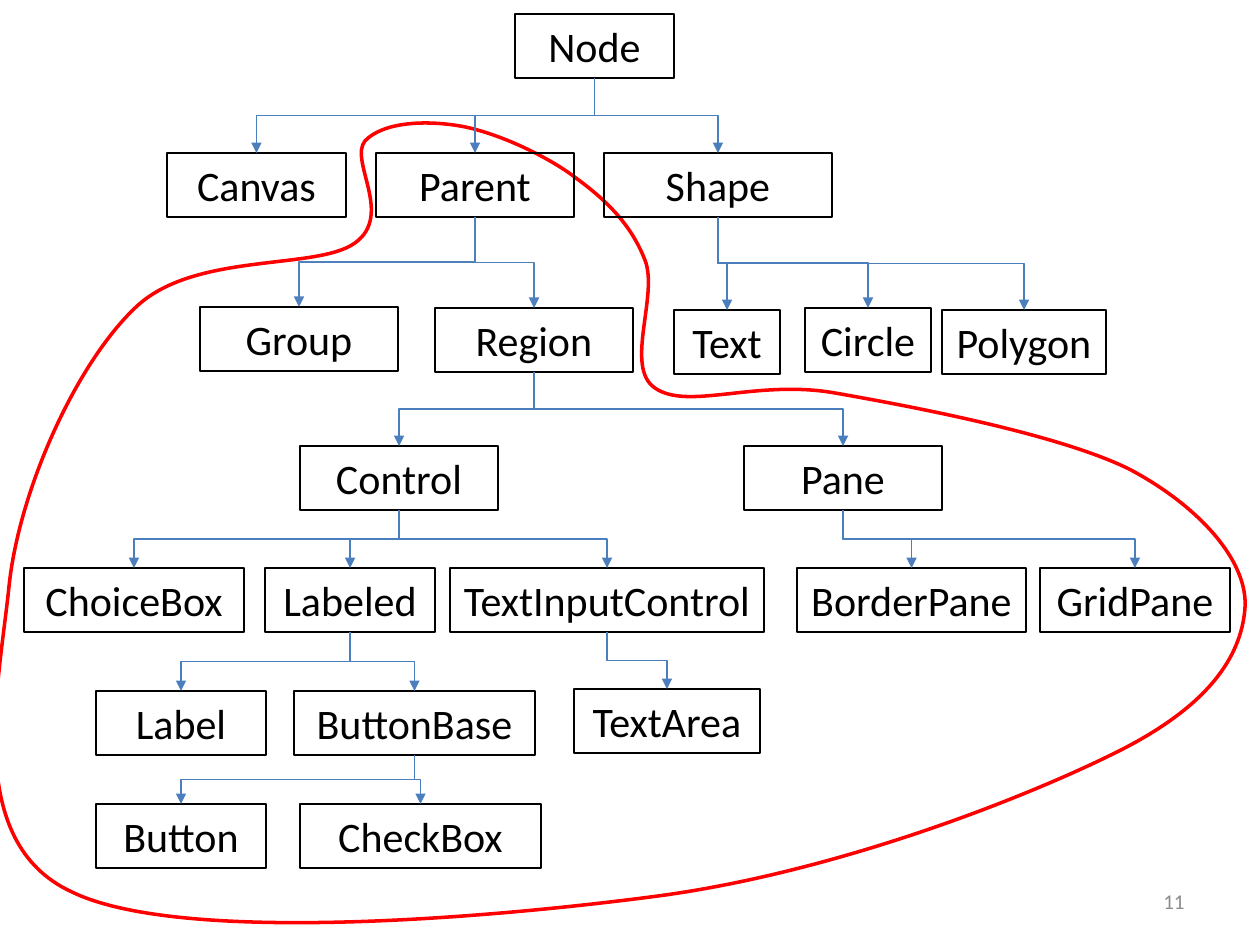
"""Draw the scene graph class hierarchy with its parent branch outlined."""
from lxml import etree
from pptx import Presentation
from pptx import util as u
from pptx.dml.color import RGBColor
from pptx.enum import shapes, text
from pptx.oxml.ns import qn

PX = u.Inches(1) / 126
THEME = {
    "font": "Calibri", "label": 24, "number": 12, "thin": 0.75, "thick": 2,
    "ink": RGBColor(0, 0, 0), "paper": RGBColor(255, 255, 255),
    "outline": RGBColor(255, 0, 0), "grey": RGBColor(0x8C, 0x8C, 0x8C),
    "link": RGBColor(0x4B, 0x7E, 0xBC), "parent": RGBColor(0x4F, 0x81, 0xBD),
}
BOX_H = 64


def px(*values):
    return [u.Emu(round(v * PX)) for v in values]


def write(sp, words, size, color, align):
    tf = sp.text_frame
    tf.word_wrap = True
    p = tf.paragraphs[0]
    p.alignment = align
    r = p.add_run()
    r.text = words
    r.font.name = THEME["font"]
    r.font.size = u.Pt(size)
    r.font.color.rgb = color
    return tf


prs = Presentation()
prs.slide_width, prs.slide_height = px(1260, 945)
s = prs.slides.add_slide(prs.slide_layouts[6])

start = (460, 126)
curves = [
    [(425, 120), (383, 122), (365, 141)],
    [(349, 161), (394, 215), (355, 243)],
    [(316, 271), (192, 251), (134, 309)],
    [(76, 365), (19, 490), (9, 587)],
    [(-1, 685), (-37, 842), (72, 892)],
    [(179, 944), (484, 919), (658, 896)],
    [(830, 873), (1013, 803), (1111, 755)],
    [(1210, 707), (1241, 656), (1245, 609)],
    [(1249, 562), (1200, 507), (1131, 470)],
    [(1062, 435), (915, 407), (835, 393)],
    [(756, 379), (688, 411), (655, 388)],
    [(624, 367), (659, 295), (645, 260)],
    [(631, 224), (606, 200), (576, 178)],
    [(546, 155), (495, 132), start],
]
builder = s.shapes.build_freeform(*start, scale=PX)
builder.add_line_segments([pt for curve in curves for pt in curve], close=True)
sp = builder.convert_to_shape()
sp.shadow.inherit = False
sp.fill.solid()
sp.fill.fore_color.rgb = THEME["paper"]
sp.line.color.rgb = THEME["outline"]
sp.line.width = u.Pt(THEME["thick"])
geom = sp._element.find(".//" + qn("a:path"))
legs = geom.findall(qn("a:lnTo"))
for i in range(0, len(legs), 3):
    bezier = etree.Element(qn("a:cubicBezTo"))
    legs[i].addprevious(bezier)
    for leg in legs[i:i + 3]:
        bezier.append(leg[0])
        geom.remove(leg)

sp = s.shapes.add_textbox(*px(903, 876, 294, 50))
tf = write(sp, "11", THEME["number"], THEME["grey"], text.PP_ALIGN.RIGHT)
tf.vertical_anchor = text.MSO_ANCHOR.MIDDLE

boxes = {
    "Node": (515, 14, 159),
    "Canvas": (167, 153, 179), "Parent": (376, 153, 198), "Shape": (604, 153, 228),
    "Group": (200, 307, 198), "Region": (435, 308, 198),
    "Text": (674, 310, 106), "Circle": (805, 308, 126), "Polygon": (942, 310, 164),
    "Control": (300, 446, 198), "Pane": (744, 446, 198),
    "ChoiceBox": (24, 568, 220), "Labeled": (265, 568, 170),
    "TextInputControl": (450, 568, 314),
    "BorderPane": (797, 568, 229), "GridPane": (1040, 568, 190),
    "Label": (96, 691, 170), "ButtonBase": (294, 691, 241), "TextArea": (574, 689, 186),
    "Button": (96, 804, 170), "CheckBox": (300, 804, 241),
}
for name, (x, y, w) in boxes.items():
    sp = s.shapes.add_shape(shapes.MSO_SHAPE.RECTANGLE, *px(x, y, w, BOX_H))
    sp.shadow.inherit = False
    sp.fill.background()
    sp.line.color.rgb = THEME["ink"]
    sp.line.width = u.Pt(THEME["thin"])
    tf = write(sp, name, THEME["label"], THEME["ink"], text.PP_ALIGN.CENTER)
    tf.auto_size = text.MSO_AUTO_SIZE.SHAPE_TO_FIT_TEXT

children = {
    "Node": ["Canvas", "Parent", "Shape"],
    "Parent": ["Group", "Region"],
    "Shape": ["Text", "Circle", "Polygon"],
    "Region": ["Control", "Pane"],
    "Control": ["ChoiceBox", "Labeled", "TextInputControl"],
    "Pane": ["BorderPane", "GridPane"],
    "Labeled": ["Label", "ButtonBase"],
    "TextInputControl": ["TextArea"],
    "ButtonBase": ["Button", "CheckBox"],
}
for parent, names in children.items():
    x, y, w = boxes[parent]
    x1, y1 = x + w / 2, y + BOX_H
    for name in names:
        x, y2, w = boxes[name]
        x2 = x + w / 2
        mid_x, mid_y = (x1 + x2) / 2, (y1 + y2) / 2
        half_w, half_h = (y2 - y1) / 2, abs(x2 - x1) / 2
        side = 1 if x2 > x1 else -1
        c = s.shapes.add_connector(
            shapes.MSO_CONNECTOR.ELBOW,
            *px(mid_x + side * half_w, mid_y - half_h,
                mid_x - side * half_w, mid_y + half_h))
        c.rotation = 270 if side > 0 else 90
        c.line.color.rgb = THEME["parent" if parent == "Parent" else "link"]
        c.line.width = u.Pt(THEME["thin"])
        etree.SubElement(c.line._get_or_add_ln(), qn("a:tailEnd"), type="triangle")
        etree.SubElement(c._element.spPr, qn("a:effectLst"))

prs.save("out.pptx")
